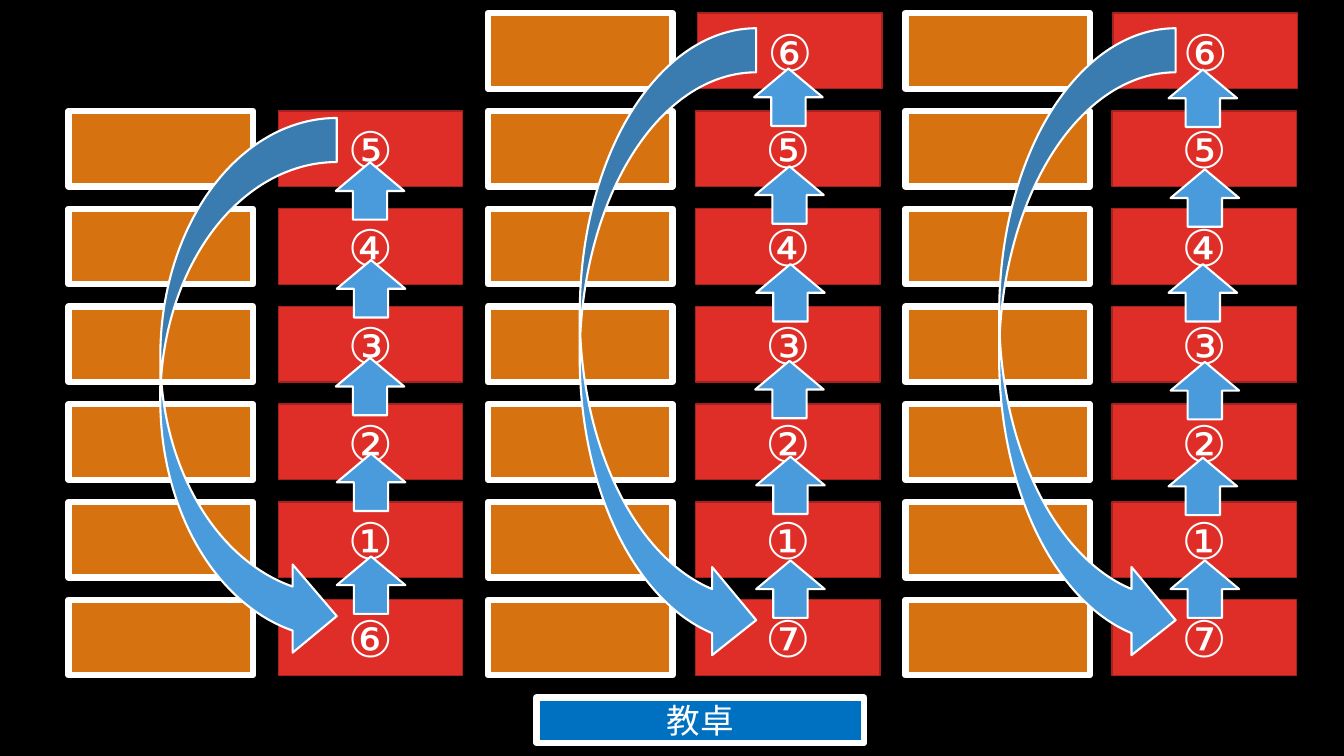
from pptx import Presentation
from pptx import util as u
from pptx.dml.color import RGBColor
from pptx.enum import shapes, text

PX = u.Inches(1) // 100  # 100 px to the inch

BLACK = RGBColor(0x00, 0x00, 0x00)
WHITE = RGBColor(0xFF, 0xFF, 0xFF)
RED = RGBColor(0xDF, 0x2E, 0x28)
DARK_RED = RGBColor(0xA5, 0x22, 0x1E)
ORANGE = RGBColor(0xD6, 0x73, 0x10)
NAVY = RGBColor(0x00, 0x70, 0xC0)
SKY = RGBColor(0x4A, 0x9B, 0xDC)

FONT = "TeX Gyre Adventor"
KIND = shapes.MSO_SHAPE

# Shape, fill, line colour, line width in points
STYLES = {
    "seat": (KIND.RECTANGLE, RED, DARK_RED, 1),
    "desk": (KIND.RECTANGLE, ORANGE, WHITE, 4.5),
    "podium": (KIND.RECTANGLE, NAVY, WHITE, 4.5),
    "step": (KIND.UP_ARROW, SKY, WHITE, 1.5),
    "return": (KIND.CURVED_RIGHT_ARROW, SKY, WHITE, 1.5),
}

DESK_W, DESK_H = 183, 75
ROW_PITCH = 97
STEP_W, STEP_H = 68, 57

# Labels run from front to back; steps give each arrow's inset in its seat
# and its rise above the top of that seat.
COLUMNS = [
    {
        "box": (68, 110, 391, 560), "labels": "⑥①②③④⑤", "top_shift": 0,
        "curve": (91, 7, 175, 538),
        "steps": [(58, 43), (58, 48), (57, 46), (58, 46), (57, 46)],
    },
    {
        "box": (484, 13, 389, 657), "labels": "⑦①②③④⑤⑥", "top_shift": 2,
        "curve": (91, 15, 175, 631),
        "steps": [(60, 39), (60, 45), (59, 43), (60, 42), (59, 42), (58, 42)],
    },
    {
        "box": (898, 13, 388, 657), "labels": "⑦①②③④⑤⑥", "top_shift": 1,
        "curve": (93, 15, 175, 631),
        "steps": [(58, 39), (56, 44), (58, 42), (56, 42), (58, 39), (56, 41)],
    },
]


def add_part(page, style, box, label="", size=36):
    kind, fill, edge, weight = STYLES[style]
    shape = page.shapes.add_shape(kind, *(value * PX for value in box))
    shape.shadow.inherit = False
    shape.fill.solid()
    shape.fill.fore_color.rgb = fill
    shape.line.color.rgb = edge
    shape.line.width = u.Pt(weight)
    if label:
        shape.text_frame.vertical_anchor = text.MSO_ANCHOR.MIDDLE
        para = shape.text_frame.paragraphs[0]
        para.alignment = text.PP_ALIGN.CENTER
        span = para.add_run()
        span.text = label
        for name, value in {"name": FONT, "size": u.Pt(size)}.items():
            setattr(span.font, name, value)
        span.font.color.rgb = WHITE


def add_column(page, box, labels, top_shift, curve, steps):
    left, top, width, height = box
    seat_left = left + width - DESK_W
    row_tops = [top + height - DESK_H - row * ROW_PITCH
                for row in range(len(labels))]

    # Pairs of desk and numbered seat
    for row, (label, row_top) in enumerate(zip(labels, row_tops)):
        shift = top_shift if row == len(labels) - 1 else 0
        add_part(page, "desk", (left, row_top, DESK_W, DESK_H))
        add_part(page, "seat",
                 (seat_left + shift, row_top, DESK_W, DESK_H), label)

    # Arrow from the back row to the front row
    dx, dy, curve_w, curve_h = curve
    add_part(page, "return", (left + dx, top + dy, curve_w, curve_h))

    # Arrows from each seat to the one behind it
    for (inset, rise), row_top in zip(steps, row_tops):
        add_part(page, "step",
                 (seat_left + inset, row_top - rise, STEP_W, STEP_H))


def add_podium(page, box):
    add_part(page, "podium", box, "教卓", 24)


def main():
    deck = Presentation()
    deck.slide_width = u.Inches(13.33)
    deck.slide_height = u.Inches(7.5)
    page = deck.slides.add_slide(deck.slide_layouts[6])
    page.background.fill.solid()
    page.background.fill.fore_color.rgb = BLACK

    for column in COLUMNS:
        add_column(page, **column)
    add_podium(page, (532, 692, 325, 45))

    deck.save("out.pptx")


if __name__ == "__main__":
    main()
